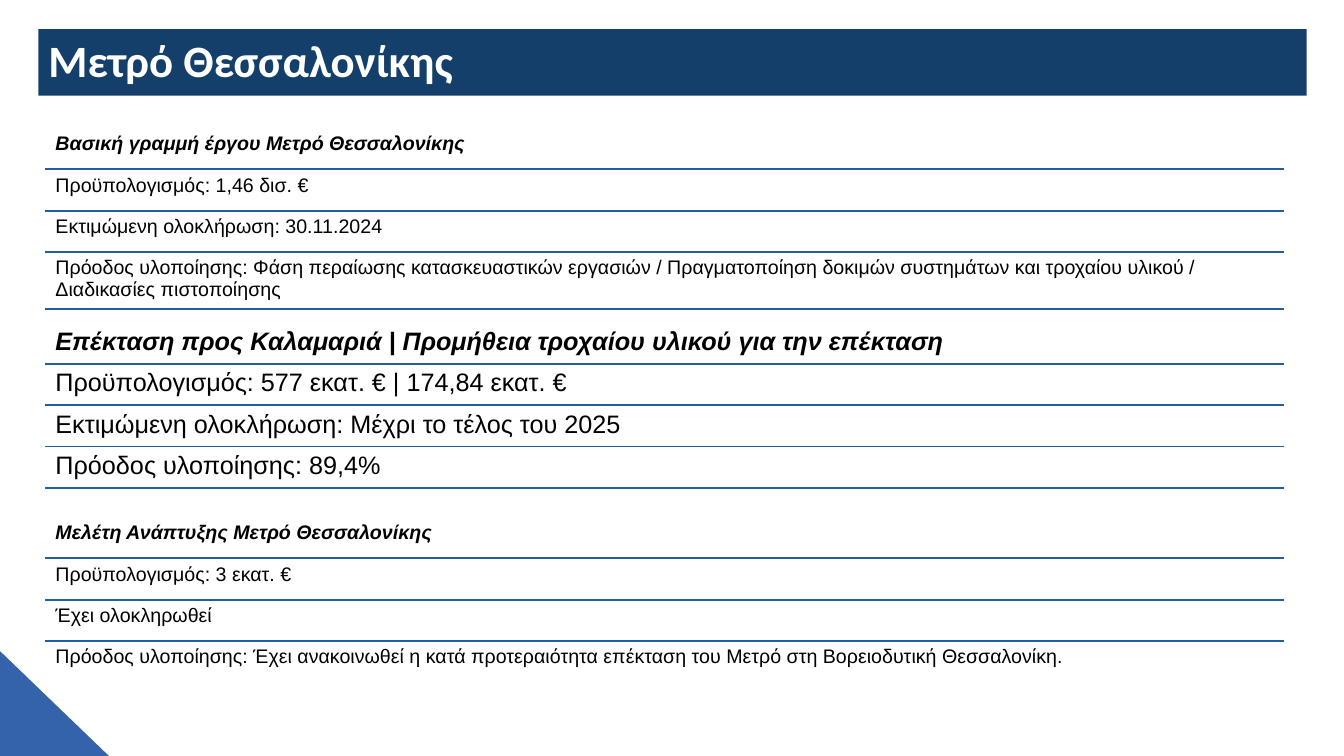
"""Builds the Thessaloniki metro status slide."""
import pptx
import pptx.util
import pptx.dml.color
import pptx.enum.shapes
import pptx.enum.text
import pptx.oxml
import pptx.oxml.ns

COLORS = {"band": "143F6A", "corner": "3462AB", "rule": "1F5FA0",
          "text": "000000", "white": "FFFFFF"}
SLIDE_W, SLIDE_H = 13.33, 7.5
ROW_H, TALL_ROW_H = 0.41, 0.57
TABLE_LEFT, TABLE_W = 0.45, 12.28
PLAIN_TABLE_STYLE = "{2D5ABB26-0587-4C30-8999-92F81FD0307C}"

PROJECTS = [
    {"top": 1.27, "size": 14, "tall_rows": {3}, "rows": [
        "Βασική γραμμή έργου Μετρό Θεσσαλονίκης",
        "Προϋπολογισμός: 1,46 δισ. €",
        "Εκτιμώμενη ολοκλήρωση: 30.11.2024",
        "Πρόοδος υλοποίησης: Φάση περαίωσης κατασκευαστικών εργασιών / "
        "Πραγματοποίηση δοκιμών συστημάτων και τροχαίου υλικού / "
        "Διαδικασίες πιστοποίησης"]},
    {"top": 3.2, "size": 18, "tall_rows": set(), "rows": [
        "Επέκταση προς Καλαμαριά | Προμήθεια τροχαίου υλικού για την επέκταση",
        "Προϋπολογισμός: 577 εκατ. € | 174,84 εκατ. €",
        "Εκτιμώμενη ολοκλήρωση: Μέχρι το τέλος του 2025",
        "Πρόοδος υλοποίησης: 89,4%",
        ""]},
    {"top": 5.13, "size": 14, "tall_rows": set(), "rows": [
        "Μελέτη Ανάπτυξης Μετρό Θεσσαλονίκης",
        "Προϋπολογισμός: 3 εκατ. €",
        "Έχει ολοκληρωθεί",
        "Πρόοδος υλοποίησης: Έχει ανακοινωθεί η κατά προτεραιότητα επέκταση "
        "του Μετρό στη Βορειοδυτική Θεσσαλονίκη."]},
]


def rgb(name):
    """Return the named colour."""
    return pptx.dml.color.RGBColor.from_string(COLORS[name])


def inches(*values):
    """Convert lengths in inches to slide units."""
    return [pptx.util.Inches(v) for v in values]


def write(tf, text, size=14, font="Arial", color="text", bold=False,
          italic=False, spacing=1.0):
    """Write one left-aligned formatted paragraph into a text frame."""
    tf.word_wrap = True
    p = tf.paragraphs[0]
    p.alignment = pptx.enum.text.PP_ALIGN.LEFT
    p.line_spacing = spacing
    r = p.add_run()
    r.text = text
    r.font.size = pptx.util.Pt(size)
    r.font.name = font
    r.font.bold, r.font.italic = bold, italic
    r.font.color.rgb = rgb(color)


def set_borders(cell, ruled_sides):
    """Draw rules on the given sides of a cell and clear the others."""
    tcPr = cell._tc.get_or_add_tcPr()
    ns = pptx.oxml.ns.nsdecls("a")
    for i, side in enumerate("LRTB"):
        fill = "<a:noFill/>"
        if side in ruled_sides:
            fill = (f'<a:solidFill><a:srgbClr val="{COLORS["rule"]}"/>'
                    "</a:solidFill>")
        tcPr.insert(i, pptx.oxml.parse_xml(
            f'<a:ln{side} {ns} w="{pptx.util.Pt(1.5)}">{fill}</a:ln{side}>'))


def add_corner(slide, left, top, width, height):
    """Place the corner triangle in the given box."""
    sp = slide.shapes.add_shape(
        pptx.enum.shapes.MSO_SHAPE.RIGHT_TRIANGLE,
        *inches(left, top, width, height))
    sp.shadow.inherit = False
    sp.fill.solid()
    sp.fill.fore_color.rgb = rgb("corner")
    sp.line.fill.background()


def add_title(slide, text, left, top, width, height):
    """Move the title placeholder to the given box and fill it as a band."""
    sp = slide.shapes.title
    sp.left, sp.top, sp.width, sp.height = inches(left, top, width, height)
    sp.fill.solid()
    sp.fill.fore_color.rgb = rgb("band")
    tf = sp.text_frame
    tf.auto_size = pptx.enum.text.MSO_AUTO_SIZE.NONE
    tf.vertical_anchor = pptx.enum.text.MSO_ANCHOR.MIDDLE
    write(tf, text, size=32, font="Calibri", color="white", bold=True,
          spacing=0.9)


def add_project(slide, project, left, width):
    """Place one project table with a rule between its rows."""
    rows = project["rows"]
    heights = [TALL_ROW_H if i in project["tall_rows"] else ROW_H
               for i in range(len(rows))]
    frame = slide.shapes.add_table(
        len(rows), 1, *inches(left, project["top"], width, sum(heights)))
    table = frame.table
    table.first_row = table.horz_banding = False
    frame.element.xpath(".//a:tableStyleId")[0].text = PLAIN_TABLE_STYLE
    last = len(rows) - 1
    for i, text in enumerate(rows):
        table.rows[i].height = pptx.util.Inches(heights[i])
        cell = table.cell(i, 0)
        cell.fill.background()
        ruled_below = i < last or i in project["tall_rows"]
        set_borders(cell, ("T" if i else "") + ("B" if ruled_below else ""))
        if text:
            write(cell.text_frame, text, size=project["size"],
                  bold=i == 0, italic=i == 0)


def main():
    """Build and save the slide."""
    prs = pptx.Presentation()
    prs.slide_width, prs.slide_height = inches(SLIDE_W, SLIDE_H)
    slide = prs.slides.add_slide(prs.slide_layouts[5])
    add_corner(slide, 0, SLIDE_H - 1.04, 1.08, 1.04)
    add_title(slide, "Μετρό Θεσσαλονίκης", 0.38, 0.29, 12.58, 0.66)
    for project in PROJECTS:
        add_project(slide, project, TABLE_LEFT, TABLE_W)
    prs.save("out.pptx")


if __name__ == "__main__":
    main()
